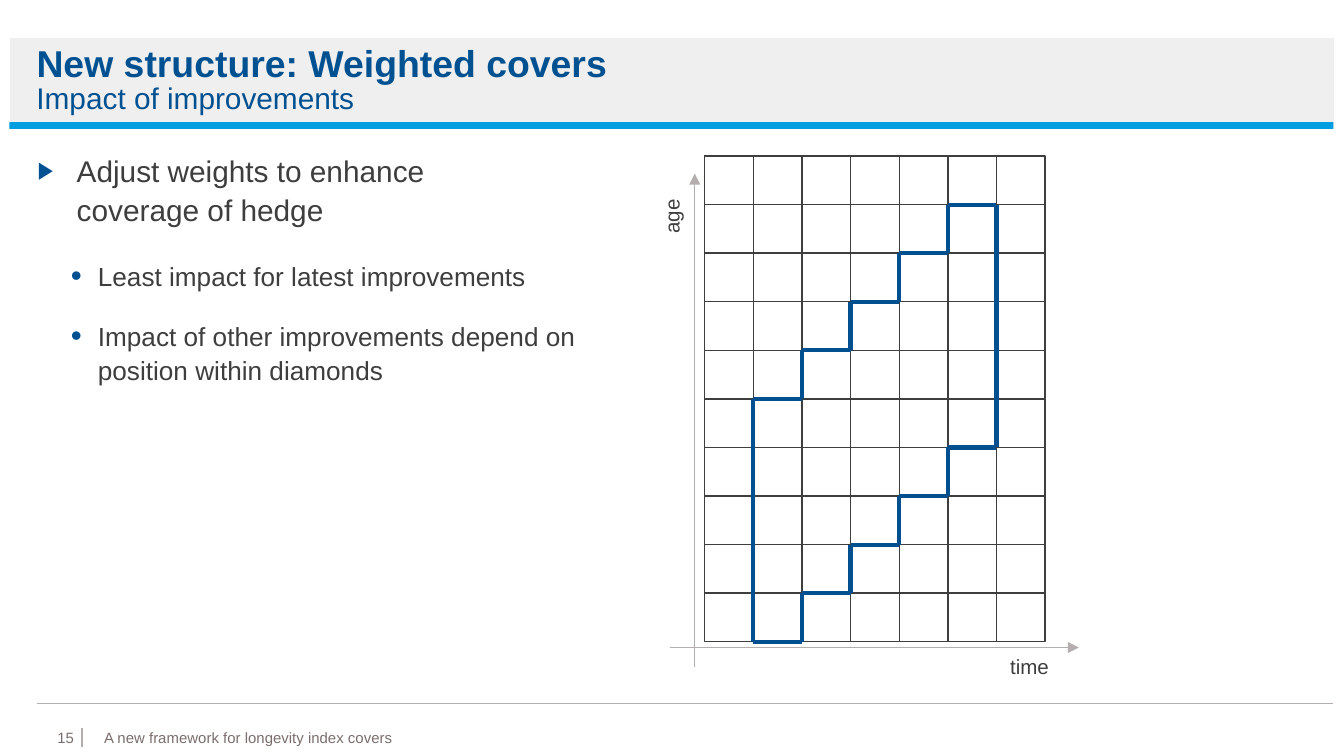
from dataclasses import dataclass

from lxml import etree
from pptx import Presentation
from pptx.dml.color import RGBColor
from pptx.enum.shapes import MSO_CONNECTOR, MSO_SHAPE
from pptx.enum.text import MSO_ANCHOR, MSO_AUTO_SIZE, PP_ALIGN
from pptx.oxml.ns import qn
from pptx.util import Cm, Pt

RECT = MSO_SHAPE.RECTANGLE
LINE = MSO_CONNECTOR.STRAIGHT
TOP = MSO_ANCHOR.TOP
FIXED = MSO_AUTO_SIZE.NONE
LEFT, RIGHT = PP_ALIGN.LEFT, PP_ALIGN.RIGHT


@dataclass(frozen=True)
class Theme:
    """Colours, type sizes and line widths."""
    font: str = "Arial"
    blue: str = "005192"
    step: str = "004F8F"
    cyan: str = "009EE0"
    band: str = "F0EFEF"
    grey: str = "B4AEAE"
    ink: str = "3E3E3E"
    note: str = "796E6B"
    white: str = "FFFFFF"
    head: int = 20
    lead: int = 16
    point: int = 14
    label: int = 11
    small: int = 8
    thin: float = 0.75
    thick: float = 2.25


THEME = Theme()


def rgb(code):
    """Turn a hex code into a colour."""
    return RGBColor.from_string(code)


def put(item, **values):
    """Set attributes of an item from its format values."""
    for name, value in values.items():
        setattr(item, name, value)


def place(shape, box):
    """Move a shape to a box given in centimetres and bring it to the front."""
    put(shape, **dict(zip(("left", "top", "width", "height"), map(Cm, box))))
    node = shape._element
    node.getparent().append(node)


def rule(slide, start, end, color, width, arrow=False):
    """Draw a straight line, with an arrowhead at its end if asked."""
    line = slide.shapes.add_connector(LINE, *map(Cm, (*start, *end)))
    line.line.color.rgb = rgb(color)
    line.line.width = Pt(width)
    props = line._element.spPr
    if arrow:
        etree.SubElement(props.find(qn("a:ln")), qn("a:tailEnd"), type="triangle")
    etree.SubElement(props, qn("a:effectLst"))


def block(slide, box, fill, edge=None):
    """Draw a filled rectangle with an optional thin edge."""
    shape = slide.shapes.add_shape(RECT, *map(Cm, box))
    shape.shadow.inherit = False
    shape.fill.solid()
    shape.fill.fore_color.rgb = rgb(fill)
    if edge:
        shape.line.color.rgb = rgb(edge)
        shape.line.width = Pt(THEME.thin)
    else:
        shape.line.fill.background()


def bullet(para, sign, scale, margin, hang):
    """Give a paragraph a coloured bullet and a hanging indent."""
    props = para._p.get_or_add_pPr()
    props.set("marL", str(Cm(margin)))
    props.set("indent", str(-Cm(hang)))
    color = etree.SubElement(props, qn("a:buClr"))
    etree.SubElement(color, qn("a:srgbClr"), val=THEME.blue)
    etree.SubElement(props, qn("a:buSzPct"), val=str(scale * 1000))
    etree.SubElement(props, qn("a:buFont"), typeface=THEME.font)
    etree.SubElement(props, qn("a:buChar"), char=sign)


def write(shape, lines, size, color, bold=False, align=LEFT, pad=(0, 0),
          wrap=True, mark=None, level=0, pitch=1.0, gap=0):
    """Fill a shape with formatted paragraphs."""
    frame = shape.text_frame
    side, rise = map(Cm, pad)
    put(frame, text="\n".join(lines), auto_size=FIXED, word_wrap=wrap,
        vertical_anchor=TOP, margin_left=side, margin_right=side,
        margin_top=rise, margin_bottom=rise)
    for spot, para in enumerate(frame.paragraphs):
        put(para, level=level, alignment=align, line_spacing=pitch,
            space_before=Pt(gap if spot else 0), space_after=Pt(0))
        if mark:
            bullet(para, *mark)
        font = para.runs[0].font
        put(font, name=THEME.font, size=Pt(size), bold=bold)
        font.color.rgb = rgb(color)


def text(slide, box, words, size, color, **style):
    """Add a text box holding one paragraph."""
    shape = slide.shapes.add_textbox(*map(Cm, box))
    write(shape, [words], size, color, **style)
    return shape


def header(slide, box):
    """Place the band, title and subtitle."""
    x, y, w, h = box
    block(slide, box, THEME.band)
    block(slide, (x - 0.01, y + h - 0.1, w, 0.13), THEME.cyan)
    title = slide.shapes.title
    place(title, (x + 0.5, y + 0.03, w - 1.25, 0.94))
    write(title, ["New structure: Weighted covers"], THEME.head, THEME.blue, bold=True)
    text(slide, (x + 0.5, y + 0.79, 6.1, 0.69), "Impact of improvements",
         THEME.lead, THEME.blue)


def points(slide, box):
    """Place the lead point and the two points below it."""
    x, y, w, h = box
    lead, rest = [slide.placeholders[key] for key in (1, 2)]
    place(lead, (x + 0.1, y, 8.86, 1.5))
    write(lead, ["Adjust weights to enhance coverage of hedge"], THEME.lead,
          THEME.ink, mark=("▶", 80, 0.74, 0.74), pitch=1.1)
    place(rest, (x, y + 2.04, w, h - 2.04))
    write(rest, ["Least impact for latest improvements",
                 "Impact of other improvements depend on position within diamonds"],
          THEME.point, THEME.ink, mark=("•", 120, 1.24, 0.51), level=1,
          pitch=1.1, gap=13.5)


def plot(slide, box, cols=7, rows=10, run=5):
    """Place the axes, the grid and the stepped outline on it."""
    x, y, w, h = box
    wide, tall = w / cols, h / rows
    base, side = y + h + 0.11, x - 0.19
    rule(slide, (x - 0.66, base), (x + w + 0.64, base), THEME.grey, THEME.thin, True)
    rule(slide, (side, base + 0.36), (side, y + 0.33), THEME.grey, THEME.thin, True)
    style = dict(size=THEME.label, color=THEME.ink, pad=(0.25, 0.13), wrap=False)
    text(slide, (x + w - 0.91, base, 1.24, 0.74), "time", **style)
    age = text(slide, (x - 1.21, y + 0.76, 1.17, 0.74), "age", **style)
    age.rotation = 270
    for row in range(rows):
        for col in range(cols):
            block(slide, (x + col * wide, y + row * tall, wide, tall),
                  THEME.white, THEME.ink)
    edges = [((1, rows), (1, rows - run)), ((1 + run, run + 1), (1 + run, 1))]
    for start in (rows, rows - run):
        for step in range(run):
            col, row = step + 2, start - step
            edges.append(((col - 1, row), (col, row)))
            if step < run - 1:
                edges.append(((col, row), (col, row - 1)))
    for edge in edges:
        ends = [(x + col * wide, y + row * tall) for col, row in edge]
        rule(slide, *ends, THEME.step, THEME.thick)


def footer(slide, box):
    """Place the rule, page number and running title."""
    x, y, w, h = box
    split = x + 0.85
    rule(slide, (x, y), (x + w, y), THEME.grey, THEME.thin)
    rule(slide, (split, y + 0.47), (split, y + 0.82), THEME.grey, THEME.thin)
    text(slide, (x - 0.04, y + 0.47, 0.74, 0.43), "15", THEME.small, THEME.note,
         align=RIGHT)
    text(slide, (x + 1.27, y + 0.47, 17.4, h - 0.47),
         "A new framework for longevity index covers", THEME.small, THEME.note)


def main():
    """Build the slide and save it."""
    deck = Presentation()
    put(deck, slide_width=Cm(25.4), slide_height=Cm(14.29))
    slide = deck.slides.add_slide(deck.slide_layouts[3])
    header(slide, (0.19, 0.72, 25.02, 1.69))
    points(slide, (0.61, 2.82, 11.48, 4.47))
    plot(slide, (13.32, 2.95, 6.43, 9.18))
    footer(slide, (0.7, 13.3, 24.5, 0.99))
    deck.save("out.pptx")


if __name__ == "__main__":
    main()
